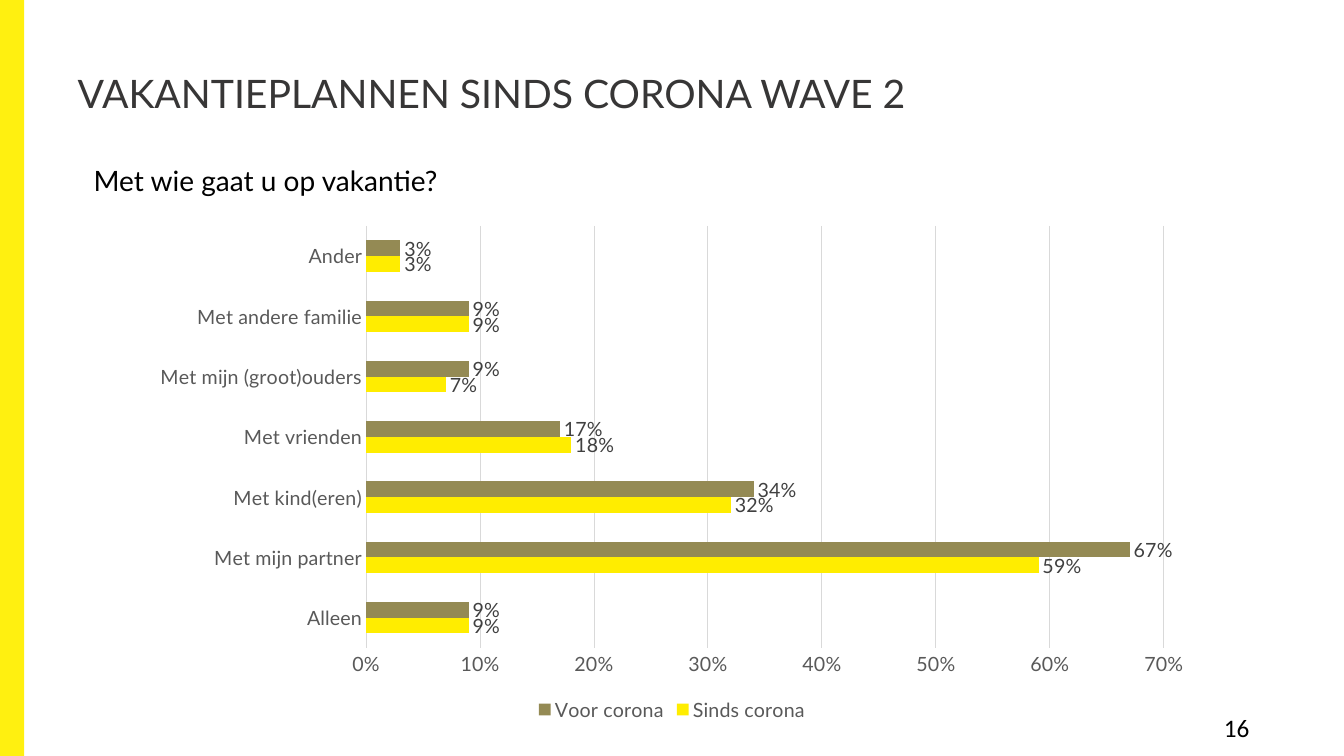
from pptx import Presentation
from pptx.chart.data import CategoryChartData
from pptx.dml.color import RGBColor
from pptx.enum.chart import XL_CHART_TYPE, XL_LABEL_POSITION, XL_LEGEND_POSITION, XL_TICK_MARK
from pptx.enum.shapes import MSO_SHAPE
from pptx.enum.text import MSO_ANCHOR, PP_ALIGN
from pptx.util import Inches, Pt

BAR_CLUSTERED = XL_CHART_TYPE.BAR_CLUSTERED
OUTSIDE_END = XL_LABEL_POSITION.OUTSIDE_END
BOTTOM = XL_LEGEND_POSITION.BOTTOM
NO_TICK = XL_TICK_MARK.NONE
RECTANGLE = MSO_SHAPE.RECTANGLE
MIDDLE, TOP = MSO_ANCHOR.MIDDLE, MSO_ANCHOR.TOP
LEFT = PP_ALIGN.LEFT

BLACK = RGBColor(0x00, 0x00, 0x00)
TITLE_GRAY = RGBColor(0x37, 0x36, 0x36)
LABEL_GRAY = RGBColor(0x40, 0x40, 0x40)
AXIS_GRAY = RGBColor(0x59, 0x59, 0x59)
GRID_GRAY = RGBColor(0xD9, 0xD9, 0xD9)
BAND_YELLOW = RGBColor(0xFF, 0xF0, 0x10)
BAR_YELLOW = RGBColor(0xFF, 0xED, 0x00)
BAR_OLIVE = RGBColor(0x94, 0x8A, 0x54)


def format_font(font, size, color, name="Lato"):
    values = {"size": Pt(size), "name": name, "bold": False}
    for attribute, value in values.items():
        setattr(font, attribute, value)
    font.color.rgb = color


def write_text(shape, text, size, color, name="Lato", anchor=TOP):
    frame = shape.text_frame
    frame.word_wrap = True
    frame.vertical_anchor = anchor
    paragraph = frame.paragraphs[0]
    paragraph.text = text
    paragraph.alignment = LEFT
    format_font(paragraph.runs[0].font, size, color, name)


presentation = Presentation()
presentation.slide_width = Inches(13.33)
presentation.slide_height = Inches(7.5)
slide = presentation.slides.add_slide(presentation.slide_layouts[5])
shapes = slide.shapes

title = shapes.title
title_place = {"left": 0.67, "top": 0.3, "width": 12, "height": 1.25}
for attribute, value in title_place.items():
    setattr(title, attribute, Inches(value))
write_text(title, "VAKANTIEPLANNEN SINDS CORONA WAVE 2", 28, TITLE_GRAY, anchor=MIDDLE)

band = shapes.add_shape(RECTANGLE, 0, 0, Inches(0.24), presentation.slide_height)
band.shadow.inherit = False
band.fill.solid()
band.fill.fore_color.rgb = BAND_YELLOW
band.line.fill.background()

page_number = shapes.add_textbox(Inches(12.04), Inches(7.02), Inches(0.63), Inches(0.4))
write_text(page_number, "16", 18, BLACK, "Calibri")

question = shapes.add_textbox(Inches(0.83), Inches(1.57), Inches(6.19), Inches(0.56))
write_text(question, "Met wie gaat u op vakantie?", 20, BLACK)

chart_data = CategoryChartData(number_format="0%")
chart_data.categories = [
    "Alleen", "Met mijn partner", "Met kind(eren)", "Met vrienden",
    "Met mijn (groot)ouders", "Met andere familie", "Ander",
]
chart_data.add_series("Sinds corona", [0.09, 0.59, 0.32, 0.18, 0.07, 0.09, 0.03])
chart_data.add_series("Voor corona", [0.09, 0.67, 0.34, 0.17, 0.09, 0.09, 0.03])
chart = shapes.add_chart(
    BAR_CLUSTERED, Inches(1.38), Inches(2.14), Inches(10.57), Inches(5.06), chart_data
).chart
chart.has_title = False
format_font(chart.font, 14, BLACK)

chart.has_legend = True
chart.legend.position = BOTTOM
chart.legend.include_in_layout = False
format_font(chart.legend.font, 14, AXIS_GRAY)

category_axis, value_axis = chart.category_axis, chart.value_axis
for axis in (category_axis, value_axis):
    axis.major_tick_mark = NO_TICK
    axis.minor_tick_mark = NO_TICK
    format_font(axis.tick_labels.font, 14, AXIS_GRAY)
value_axis.minimum_scale = 0
value_axis.maximum_scale = 0.7
value_axis.major_unit = 0.1
value_axis.tick_labels.number_format = "0%"
value_axis.tick_labels.number_format_is_linked = False
value_axis.format.line.fill.background()
value_axis.has_major_gridlines = True
for line in (category_axis.format.line, value_axis.major_gridlines.format.line):
    line.color.rgb = GRID_GRAY
    line.width = Pt(0.75)

plot = chart.plots[0]
plot.gap_width = 182
plot.overlap = 0
plot.vary_by_categories = False
for series, color in zip(plot.series, (BAR_YELLOW, BAR_OLIVE)):
    series.format.fill.solid()
    series.format.fill.fore_color.rgb = color
    series.invert_if_negative = False
    labels = series.data_labels
    labels.show_value = True
    labels.position = OUTSIDE_END
    labels.number_format = "0%"
    labels.number_format_is_linked = False
    format_font(labels.font, 14, LABEL_GRAY)

presentation.save("out.pptx")
